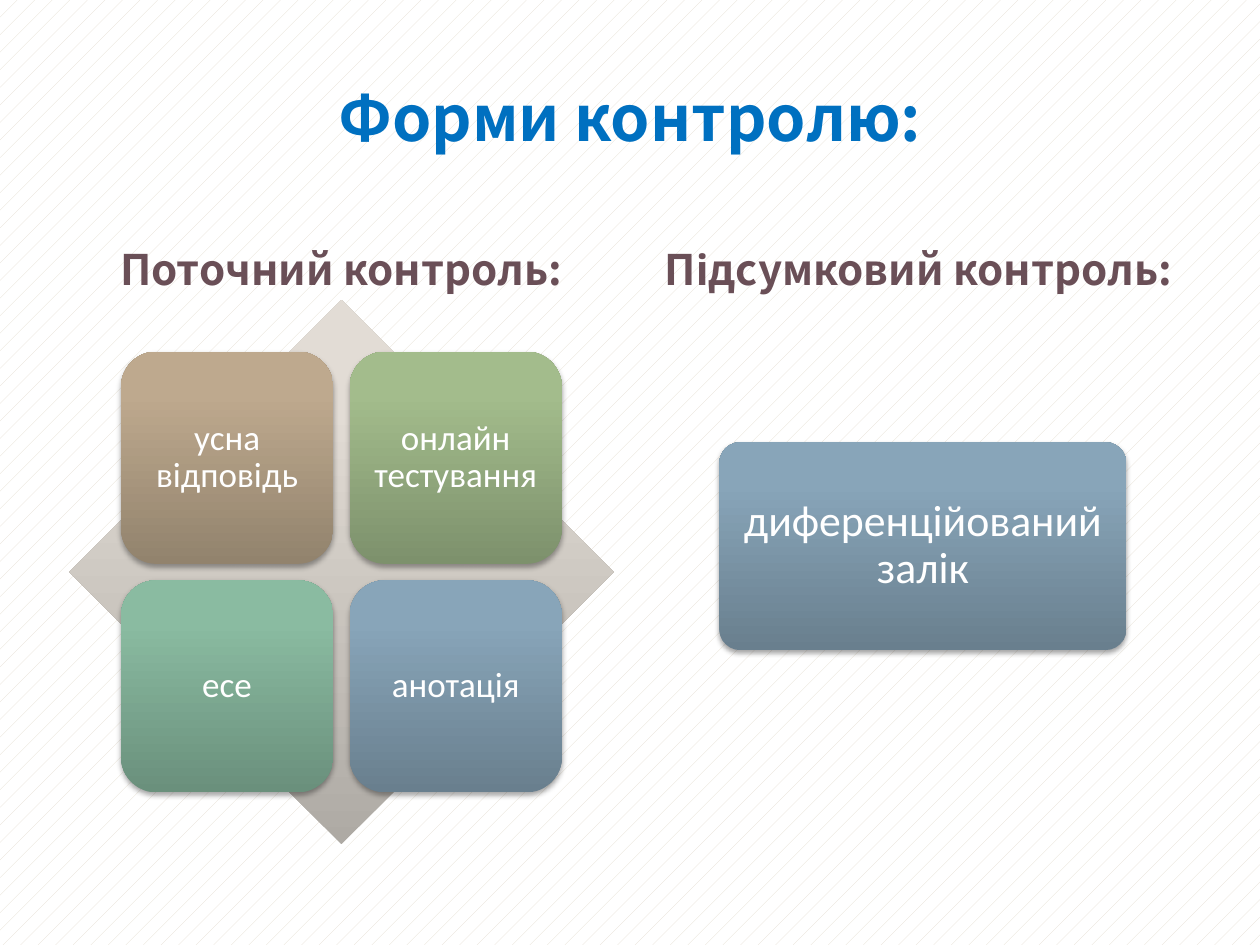
from copy import deepcopy

from lxml.etree import SubElement
from pptx import Presentation
from pptx.dml.color import RGBColor
from pptx.enum.dml import MSO_PATTERN
from pptx.enum.shapes import MSO_SHAPE as Shape
from pptx.enum.text import MSO_ANCHOR as Anchor, PP_ALIGN as Align
from pptx.oxml.ns import qn
from pptx.util import Inches, Pt

HEADING_FONT = "Noto Sans CJK KR"
DIAMOND = ("AEAAA4", "E2DCD5", "E3DDD6")
TAN = ("92836D", "BEA98E", "BFAA8D")
GREEN = ("7D916C", "A3BC8C", "A4BE8B")
TEAL = ("6A907C", "8ABBA1", "89BCA1")
BLUE = ("697F8E", "88A5B9", "87A6BB")
CURRENT_FORMS = [("усна відповідь", TAN), ("онлайн тестування", GREEN),
                 ("есе", TEAL), ("анотація", BLUE)]


def color(value):
    """Turn a hex string into a colour."""
    return RGBColor.from_string(value)


def write(shape, text, size=20, font="Calibri", ink="FFFFFF", bold=False,
          anchor=Anchor.MIDDLE, inset=None, spacing=None):
    """Write one centred paragraph into a shape."""
    frame = shape.text_frame
    frame.word_wrap = True
    frame.vertical_anchor = anchor
    if inset is not None:
        frame.margin_left = frame.margin_right = Inches(inset)
        frame.margin_top = frame.margin_bottom = Inches(inset)
    frame.text = text
    paragraph = frame.paragraphs[0]
    paragraph.alignment = Align.CENTER
    if spacing:
        paragraph.line_spacing = spacing
    run_font = paragraph.runs[0].font
    run_font.name, run_font.size, run_font.bold = font, Pt(size), bold
    run_font.color.rgb = color(ink)


def add_gradient_shape(slide, kind, left, top, width, height, colors):
    """Add an unlined shape shaded from its bottom to its top."""
    shape = slide.shapes.add_shape(kind, Inches(left), Inches(top),
                                   Inches(width), Inches(height))
    shape.shadow.inherit = False
    shape.line.fill.background()
    shape.fill.gradient()
    shape.fill.gradient_angle = 90
    stop_list = shape._element.spPr.find(".//" + qn("a:gsLst"))
    stop_list.append(deepcopy(stop_list[-1]))
    for stop, position, value in zip(shape.fill.gradient_stops, (0, 0.8, 1), colors):
        stop.position = position
        stop.color.rgb = color(value)
    return shape


def add_card(slide, left, top, width, height, colors):
    """Add a rounded card with a soft shadow below it."""
    card = add_gradient_shape(slide, Shape.ROUNDED_RECTANGLE,
                              left, top, width, height, colors)
    effects = card._element.spPr.find(qn("a:effectLst"))
    shadow = SubElement(effects, qn("a:outerShdw"), blurRad=str(Pt(3.1)),
                        dist=str(Pt(1.8)), dir="5400000", rotWithShape="0")
    black = SubElement(shadow, qn("a:srgbClr"), val="000000")
    SubElement(black, qn("a:alpha"), val="35000")
    return card


def add_title(slide, left, top, width, height):
    """Place and format the slide title."""
    title = slide.shapes.title
    title.left, title.top = Inches(left), Inches(top)
    title.width, title.height = Inches(width), Inches(height)
    write(title, "Форми контролю:", size=36, font=HEADING_FONT,
          ink="0070C0", bold=True)


def add_heading(slide, text, left, top, width, height):
    """Add a column heading."""
    heading = slide.shapes.add_textbox(Inches(left), Inches(top),
                                       Inches(width), Inches(height))
    write(heading, text, size=24, font=HEADING_FONT, ink="6A4F57",
          bold=True, anchor=Anchor.BOTTOM)


def add_current_control(slide, left, top, size):
    """Add the diamond with its two by two grid of cards."""
    add_gradient_shape(slide, Shape.DIAMOND, left, top, size, size, DIAMOND)
    margin, step, side = 0.095 * size, 0.42 * size, 0.39 * size
    for index, (text, colors) in enumerate(CURRENT_FORMS):
        row, column = divmod(index, 2)
        card = add_card(slide, left + margin + column * step,
                        top + margin + row * step, side, side, colors)
        write(card, text, inset=0.08, spacing=0.9)


def add_final_control(slide, left, top, width, height):
    """Add the single card of the final control."""
    card = add_card(slide, left, top, width, height, BLUE)
    card.adjustments[0] = 0.1
    write(card, "диференційований залік", size=25, inset=0.1, spacing=0.9)


def main():
    """Build the slide and save it."""
    deck = Presentation()
    deck.slide_width, deck.slide_height = Inches(10), Inches(7.5)
    slide = deck.slides.add_slide(deck.slide_layouts[5])
    backdrop = slide.background.fill
    backdrop.patterned()
    backdrop.pattern = MSO_PATTERN.PERCENT_5
    backdrop.fore_color.rgb = color("E3DCCF")
    backdrop.back_color.rgb = color("FFFFFF")
    add_title(slide, 0.5, 0.3, 9, 1.25)
    add_heading(slide, "Поточний контроль:", 0.5, 1.68, 4.42, 0.7)
    add_current_control(slide, 0.55, 2.38, 4.32)
    add_heading(slide, "Підсумковий контроль:", 5.08, 1.68, 4.42, 0.7)
    add_final_control(slide, 5.71, 3.51, 3.23, 1.65)
    deck.save("out.pptx")


if __name__ == "__main__":
    main()
